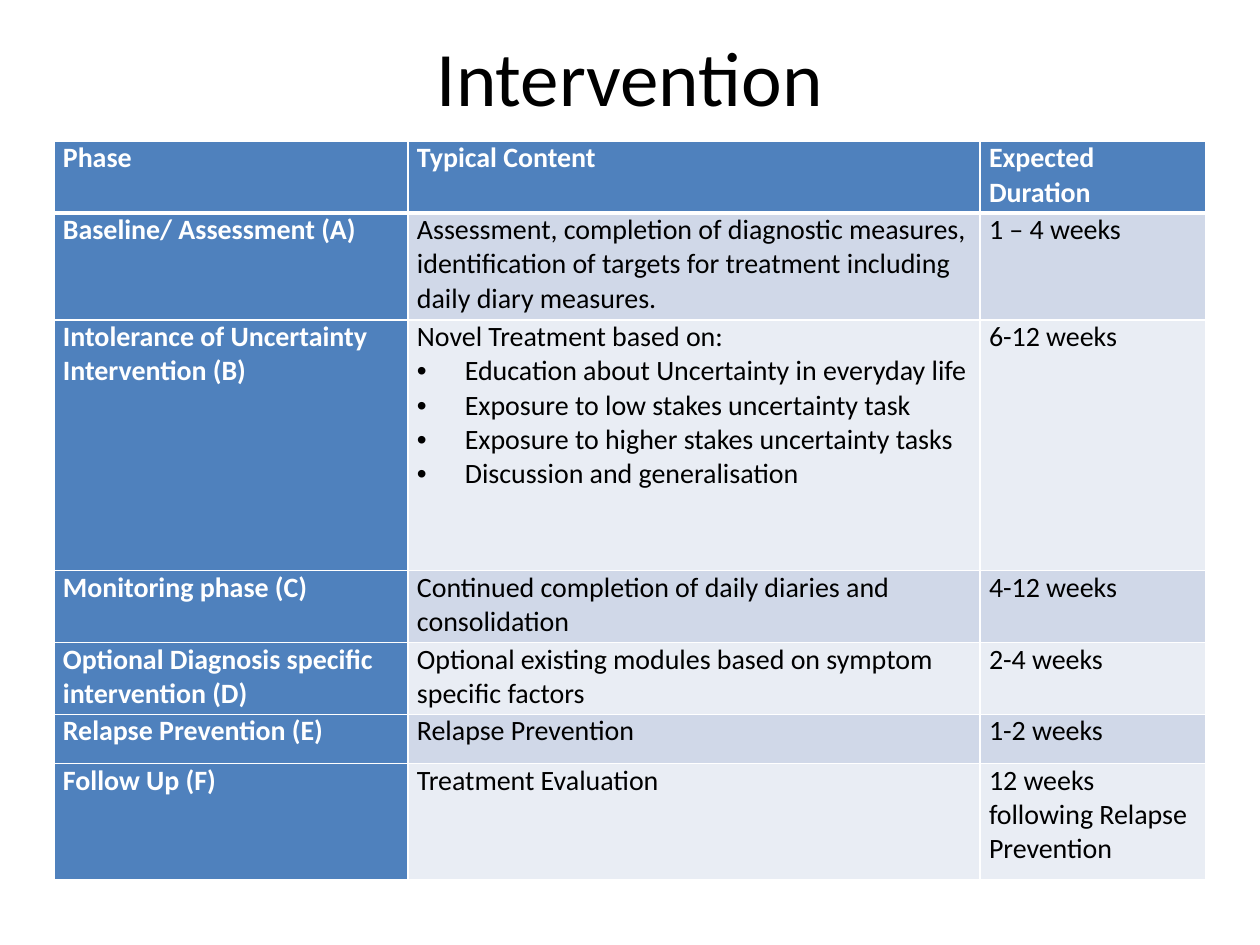
"""Build the Intervention slide: a title above a table of treatment phases."""
import pptx
import pptx.dml.color
import pptx.enum.text
import pptx.oxml
import pptx.oxml.ns
import pptx.util

Inches = pptx.util.Inches
RGBColor = pptx.dml.color.RGBColor
Align = pptx.enum.text.PP_ALIGN
Anchor = pptx.enum.text.MSO_ANCHOR

BLACK = RGBColor(0x00, 0x00, 0x00)
WHITE = RGBColor(0xFF, 0xFF, 0xFF)
BLUE = RGBColor(0x4F, 0x81, 0xBD)
BANDS = (RGBColor(0xE9, 0xED, 0xF4), RGBColor(0xD0, 0xD8, 0xE8))

COLUMN_WIDTHS = (2.81, 4.54, 1.79)
ROW_HEIGHTS = (0.57, 0.85, 1.99, 0.57, 0.57, 0.39, 0.92)
HANGING = 0.38
PHASES = (
    ("Phase", ["Typical Content"], "Expected Duration"),
    ("Baseline/ Assessment (A)",
     ["Assessment, completion of diagnostic measures, identification of targets "
      "for treatment including daily diary measures."],
     "1 – 4 weeks"),
    ("Intolerance of Uncertainty Intervention (B)",
     ["Novel Treatment based on:",
      "Education about Uncertainty in everyday life",
      "Exposure to low stakes uncertainty task",
      "Exposure to higher stakes uncertainty tasks",
      "Discussion and generalisation"],
     "6-12 weeks"),
    ("Monitoring phase (C)",
     ["Continued completion of daily diaries and consolidation"], "4-12 weeks"),
    ("Optional Diagnosis specific intervention (D)",
     ["Optional existing modules based on symptom specific factors"], "2-4 weeks"),
    ("Relapse Prevention (E)", ["Relapse Prevention"], "1-2 weeks"),
    ("Follow Up (F)", ["Treatment Evaluation"], "12 weeks following Relapse Prevention"),
)


def write(paragraph, text, size=16, color=BLACK, bold=False, align=Align.LEFT):
    """Put formatted text into a paragraph."""
    paragraph.alignment = align
    run = paragraph.add_run()
    run.text = text
    run.font.name = "Calibri"
    run.font.size = pptx.util.Pt(size)
    run.font.bold = bold
    run.font.color.rgb = color


def add_bullet(paragraph):
    """Give a paragraph a hanging bullet."""
    properties = paragraph._p.get_or_add_pPr()
    properties.set("marL", str(Inches(HANGING)))
    properties.set("indent", str(-Inches(HANGING)))
    bullet_font = pptx.oxml.ns.nsdecls("a")
    properties.append(pptx.oxml.parse_xml(f'<a:buFont {bullet_font} typeface="Arial"/>'))
    properties.append(pptx.oxml.parse_xml(f'<a:buChar {bullet_font} char="•"/>'))


def add_borders(cell, bottom):
    """Draw white lines round a cell, with the bottom one of a given width."""
    for side, width in (("L", 1), ("R", 1), ("T", 1), ("B", bottom)):
        cell._tc.get_or_add_tcPr().append(pptx.oxml.parse_xml(
            f'<a:ln{side} {pptx.oxml.ns.nsdecls("a")} w="{pptx.util.Pt(width)}">'
            f'<a:solidFill><a:srgbClr val="{WHITE}"/></a:solidFill></a:ln{side}>'))


def fill_cell(cell, lines, fill, bottom=1, **text_format):
    """Fill a cell with a first line and bulleted further lines."""
    cell.margin_left = cell.margin_right = Inches(0.07)
    cell.margin_top = cell.margin_bottom = 0
    cell.vertical_anchor = Anchor.TOP
    add_borders(cell, bottom)
    cell.fill.solid()
    cell.fill.fore_color.rgb = fill
    frame = cell.text_frame
    for index, line in enumerate(lines):
        paragraph = frame.add_paragraph() if index else frame.paragraphs[0]
        write(paragraph, line, **text_format)
        if index:
            add_bullet(paragraph)


def add_title(slide, text):
    """Place the slide title."""
    title = slide.shapes.title
    title.left, title.top = Inches(0.5), Inches(0.13)
    title.width, title.height = Inches(9), Inches(0.94)
    title.text_frame.vertical_anchor = Anchor.MIDDLE
    write(title.text_frame.paragraphs[0], text, size=44, align=Align.CENTER)


def add_phase_table(slide):
    """Place the table of phases, contents and durations."""
    phase_table = slide.shapes.add_table(
        len(PHASES), len(COLUMN_WIDTHS), Inches(0.43), Inches(1.12),
        Inches(sum(COLUMN_WIDTHS)), Inches(sum(ROW_HEIGHTS))).table
    phase_table.first_col = True
    for column, width in zip(phase_table.columns, COLUMN_WIDTHS):
        column.width = Inches(width)
    for row, height in zip(phase_table.rows, ROW_HEIGHTS):
        row.height = Inches(height)
    for r, (phase, content, duration) in enumerate(PHASES):
        for c, lines in enumerate(([phase], content, [duration])):
            heading = r == 0 or c == 0
            fill_cell(phase_table.cell(r, c), lines,
                      fill=BLUE if heading else BANDS[r % 2],
                      bottom=1 if r else 3,
                      color=WHITE if heading else BLACK,
                      bold=heading,
                      align=Align.LEFT if r else Align.JUSTIFY)


def main():
    """Build and save the slide."""
    deck = pptx.Presentation()
    deck.slide_width, deck.slide_height = Inches(10), Inches(7.5)
    slide = deck.slides.add_slide(deck.slide_layouts[5])
    add_title(slide, "Intervention")
    add_phase_table(slide)
    deck.save("out.pptx")


if __name__ == "__main__":
    main()
